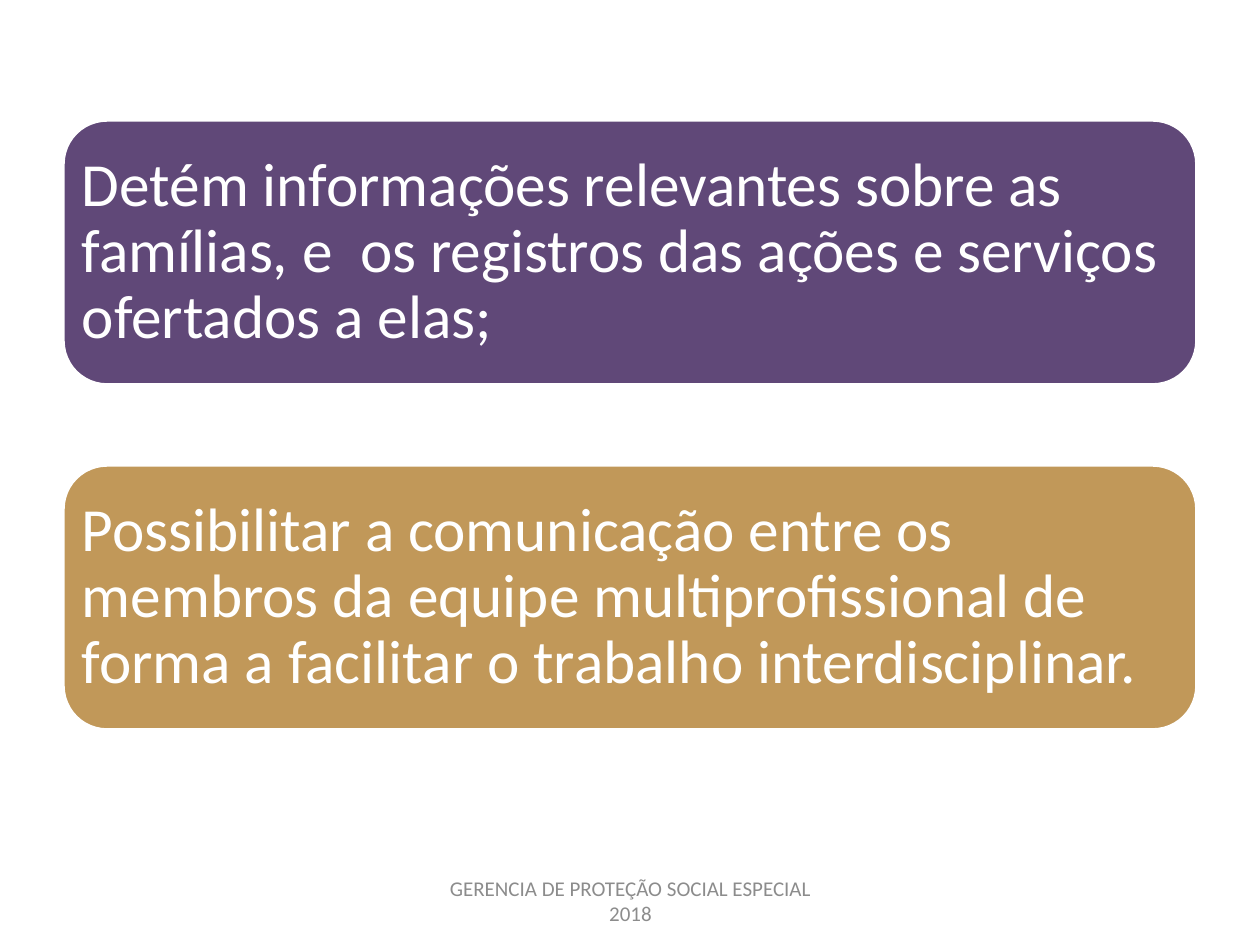
from pptx import Presentation
from pptx.dml.color import RGBColor
from pptx.enum.shapes import MSO_SHAPE
from pptx.enum.text import MSO_ANCHOR, PP_ALIGN
from pptx.util import Emu, Pt

ROUNDED = MSO_SHAPE.ROUNDED_RECTANGLE
MIDDLE = MSO_ANCHOR.MIDDLE
LEFT, CENTER = PP_ALIGN.LEFT, PP_ALIGN.CENTER
BLANK_LAYOUT = 6
COLORS = {"purple": "604878", "gold": "C19859", "white": "FFFFFF", "gray": "8C8C8C"}
CARDS = [
    ("purple", "Detém informações relevantes sobre as famílias, e  os registros "
               "das ações e serviços ofertados a elas;"),
    ("gold", "Possibilitar a comunicação entre os membros da equipe "
             "multiprofissional de forma a facilitar o trabalho interdisciplinar."),
]
CARD_HEIGHT, CARD_GAP = 265, 80
FOOTER = "GERENCIA DE PROTEÇÃO SOCIAL ESPECIAL 2018"


def px(n):
    """Turn whole pixels into EMU at 126 px to the inch."""
    return Emu(round(n * 914400 / 126))


def rgb(name):
    """Look up a colour by name."""
    return RGBColor.from_string(COLORS[name])


def write(tf, text, size, color, align, spacing=1.0):
    """Fill a text frame with one formatted paragraph."""
    tf.word_wrap = True
    tf.vertical_anchor = MIDDLE
    p = tf.paragraphs[0]
    for key, value in {"alignment": align, "line_spacing": spacing}.items():
        setattr(p, key, value)
    r = p.add_run()
    r.text = text
    for key, value in {"name": "Calibri", "size": Pt(size)}.items():
        setattr(r.font, key, value)
    r.font.color.rgb = rgb(color)


def add_card(s, box, color, text):
    """Draw one rounded card with its statement."""
    sp = s.shapes.add_shape(ROUNDED, *map(px, box))
    sp.shadow.inherit = False
    sp.fill.solid()
    sp.fill.fore_color.rgb = rgb(color)
    sp.line.color.rgb = rgb("white")
    sp.line.width = Pt(2)
    tf = sp.text_frame
    for side in ("left", "top", "right", "bottom"):
        setattr(tf, f"margin_{side}", px(6))
    write(tf, text, 35, "white", LEFT, 0.9)


def add_cards(s, box):
    """Stack the cards with equal gaps from the top of the box."""
    left, top, width, height = box
    for i, (color, text) in enumerate(CARDS):
        y = top + i * (height + CARD_GAP)
        add_card(s, (left, y, width, height), color, text)


def add_footer(s, box):
    """Place the centred footer text."""
    sp = s.shapes.add_textbox(*map(px, box))
    write(sp.text_frame, FOOTER, 12, "gray", CENTER)


def main():
    """Build and save the slide."""
    prs = Presentation()
    prs.slide_width, prs.slide_height = px(1260), px(945)
    s = prs.slides.add_slide(prs.slide_layouts[BLANK_LAYOUT])
    add_cards(s, (63, 120, 1134, CARD_HEIGHT))
    add_footer(s, (431, 876, 399, 50))
    prs.save("out.pptx")


if __name__ == "__main__":
    main()
